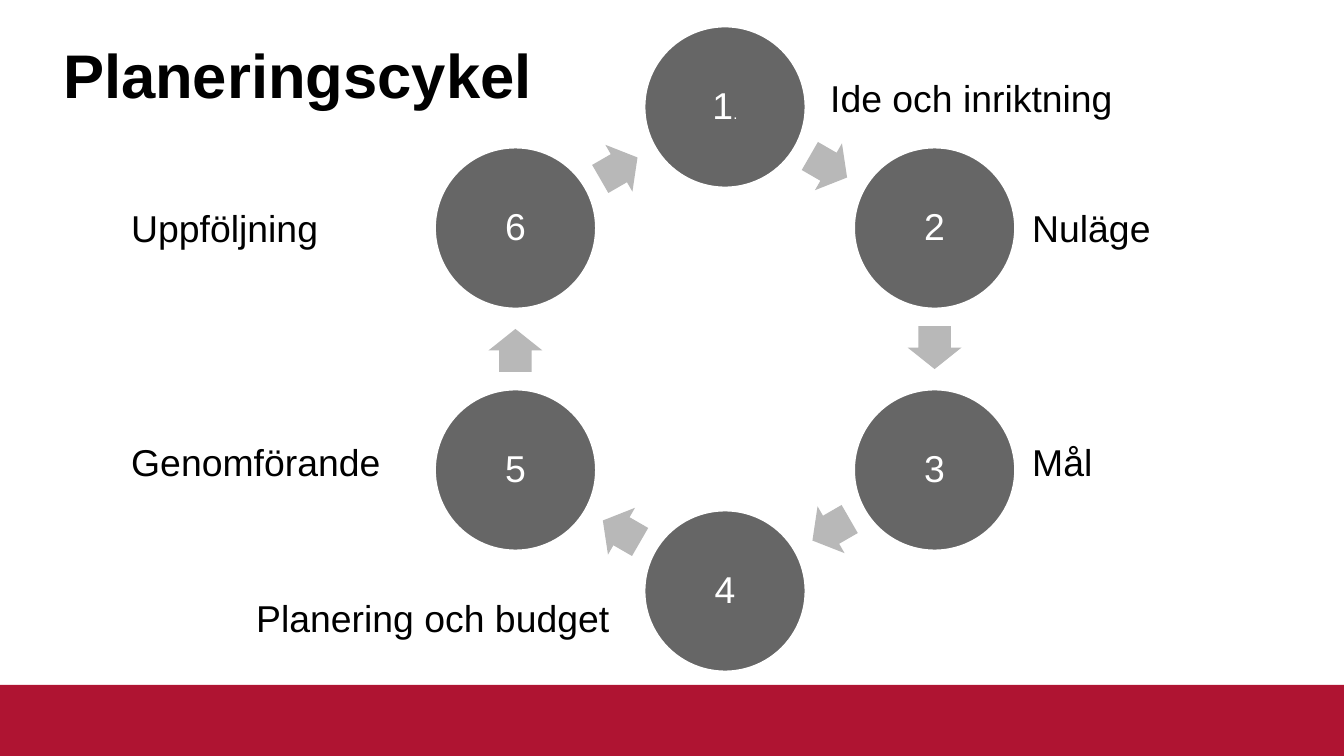
from math import cos, radians, sin

from pptx import Presentation
from pptx.dml.color import RGBColor
from pptx.enum.shapes import MSO_SHAPE as Shape
from pptx.enum.text import MSO_ANCHOR as Anchor, MSO_AUTO_SIZE as Fit, PP_ALIGN as Align
from pptx.util import Pt

PX = 914400 / 134.4
WIDTH, HEIGHT = 1344, 756

BLACK = RGBColor(0x00, 0x00, 0x00)
WHITE = RGBColor(0xFF, 0xFF, 0xFF)
RED = RGBColor(0xAF, 0x14, 0x32)
DARK = RGBColor(0x66, 0x66, 0x66)
LIGHT = RGBColor(0xB8, 0xB8, 0xB8)

HUB = (725, 349)
RING = 242
NODE = 161
ARROW = (43, 54)
STEP = 60
LAG = 0.4  # degrees each arrow sits behind the middle of its gap

NODES = [[("1", 20), (".", 8)]] + [[(str(n), 20)] for n in range(2, 7)]
LABELS = [
    ("Ide och inriktning", 817, 69, 316),
    ("Nuläge", 1019, 199, 316),
    ("Mål", 1019, 433, 316),
    ("Planering och budget", 243, 589, 429),
    ("Genomförande", 118, 433, 316),
    ("Uppföljning", 118, 199, 316),
]


def px(*nums):
    return [round(n * PX) for n in nums]


def add_run(para, text, size, color, bold=False):
    run = para.add_run()
    run.text = text
    font = run.font
    font.name, font.size, font.bold = "Arial", Pt(size), bold
    font.color.rgb = color


def set_pad(frame, pad):
    frame.margin_left = frame.margin_right = pad
    frame.margin_top = frame.margin_bottom = pad


def add_form(slide, kind, box, fill):
    form = slide.shapes.add_shape(kind, *px(*box))
    form.shadow.inherit = False
    form.fill.solid()
    form.fill.fore_color.rgb = fill
    form.line.fill.background()
    return form


def around(angle, reach, wide, high):
    """Box centred on the point at this angle and distance from the hub."""
    x = HUB[0] + reach * cos(radians(angle))
    y = HUB[1] + reach * sin(radians(angle))
    return x - wide / 2, y - high / 2, wide, high


def add_title(slide, text):
    title = slide.shapes.title
    title.left, title.top, title.width, title.height = px(63, 42, 1218, 74)
    frame = title.text_frame
    frame.auto_size = Fit.NONE
    frame.vertical_anchor = Anchor.MIDDLE
    set_pad(frame, 0)
    para = frame.paragraphs[0]
    para.alignment = Align.LEFT
    para.line_spacing = 0.9
    add_run(para, text, 33, BLACK, True)


def add_node(slide, angle, runs):
    node = add_form(slide, Shape.OVAL, around(angle, RING, NODE, NODE), DARK)
    node.line.color.rgb = WHITE
    node.line.width = Pt(1)
    frame = node.text_frame
    frame.vertical_anchor = Anchor.MIDDLE
    set_pad(frame, px(4)[0])
    para = frame.paragraphs[0]
    para.alignment = Align.CENTER
    para.line_spacing = 0.9
    for text, size in runs:
        add_run(para, text, size, WHITE)


def add_arrow(slide, angle):
    """Arrow in the gap at this angle, pointing clockwise."""
    reach = RING * cos(radians(STEP / 2))
    box = around(angle - LAG, reach, *ARROW)
    arrow = add_form(slide, Shape.RIGHT_ARROW, box, LIGHT)
    arrow.adjustments[0] = 0.6
    arrow.adjustments[1] = 0.5
    arrow.rotation = (angle + 90) % 360


def add_label(slide, text, left, top, width):
    box = slide.shapes.add_textbox(*px(left, top, width, 59))
    frame = box.text_frame
    frame.word_wrap = True
    frame.auto_size = Fit.SHAPE_TO_FIT_TEXT
    add_run(frame.paragraphs[0], text, 20, BLACK)


def main():
    deck = Presentation()
    deck.slide_width, deck.slide_height = px(WIDTH, HEIGHT)
    slide = deck.slides.add_slide(deck.slide_layouts[5])
    add_form(slide, Shape.RECTANGLE, (0, 685, WIDTH, HEIGHT - 685), RED)
    add_title(slide, "Planeringscykel")
    for i, runs in enumerate(NODES):
        angle = i * STEP - 90
        add_node(slide, angle, runs)
        add_arrow(slide, angle + STEP / 2)
    for label in LABELS:
        add_label(slide, *label)
    deck.save("out.pptx")


if __name__ == "__main__":
    main()
